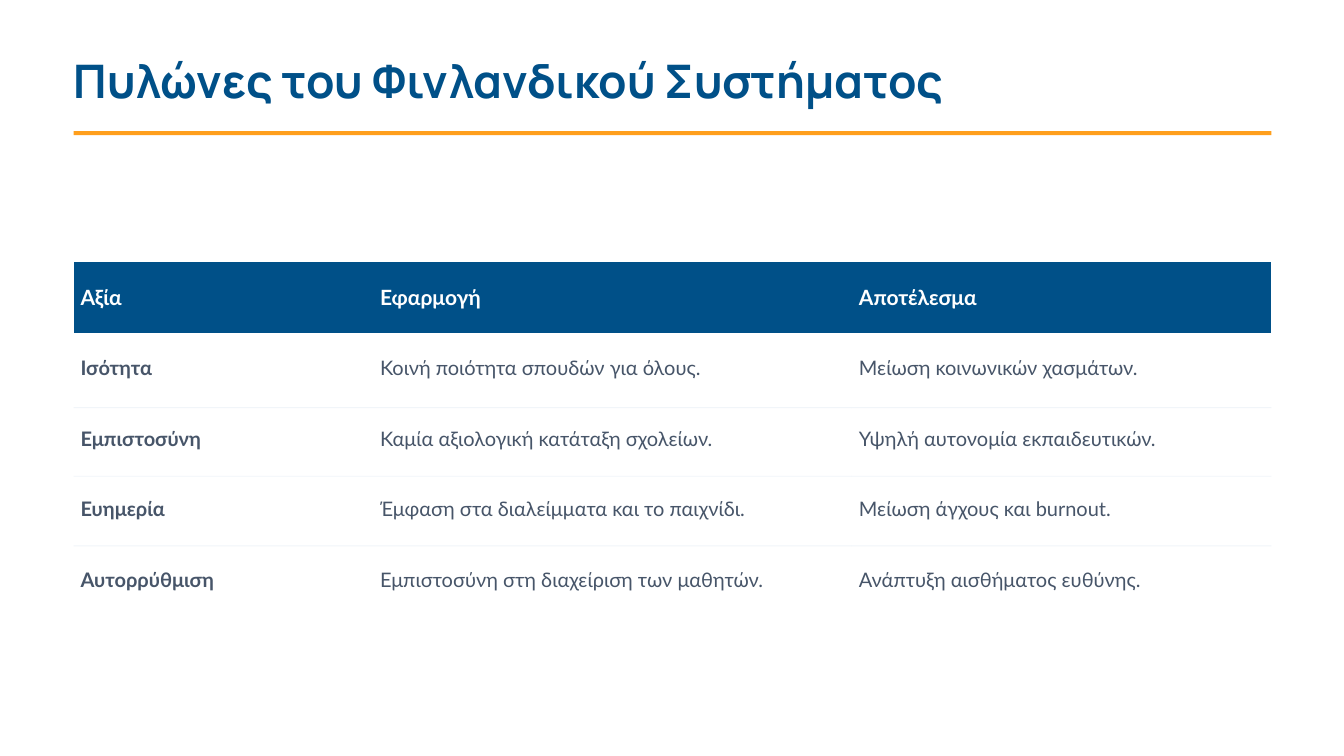
import pptx
import pptx.dml.color
import pptx.enum.shapes
import pptx.enum.text
import pptx.oxml.ns
import pptx.util
from pptx.util import Inches

NAVY, ORANGE, SLATE = "005088", "FF9F1C", "475569"
WHITE, PALE = "FFFFFF", "F1F5F9"
LEFT = 0.73
COLUMN_WIDTHS = (2.97, 4.75, 4.16)
WIDTH = sum(COLUMN_WIDTHS)
ROW_HEIGHT = 0.7
RULE_TOPS = (4.04, 4.72, 5.41)
PLAIN_TABLE_STYLE = "{2D5ABB26-0587-4C30-8999-92F81FD0307C}"

ROWS = (
    ("Αξία", "Εφαρμογή", "Αποτέλεσμα"),
    ("Ισότητα", "Κοινή ποιότητα σπουδών για όλους.", "Μείωση κοινωνικών χασμάτων."),
    ("Εμπιστοσύνη", "Καμία αξιολογική κατάταξη σχολείων.", "Υψηλή αυτονομία εκπαιδευτικών."),
    ("Ευημερία", "Έμφαση στα διαλείμματα και το παιχνίδι.", "Μείωση άγχους και burnout."),
    ("Αυτορρύθμιση", "Εμπιστοσύνη στη διαχείριση των μαθητών.", "Ανάπτυξη αισθήματος ευθύνης."),
)


def set_fill(fill, color):
    fill.solid()
    fill.fore_color.rgb = pptx.dml.color.RGBColor.from_string(color)


def write_text(text_frame, text, font="Lato", size=14.25, color=SLATE, bold=False):
    paragraph = text_frame.paragraphs[0]
    paragraph.alignment = pptx.enum.text.PP_ALIGN.LEFT
    run = paragraph.add_run()
    run.text = text
    run.font.name = font
    run.font.size = pptx.util.Pt(size)
    run.font.bold = bold
    set_fill(run.font.fill, color)


def add_title(slide, text):
    title = slide.shapes.title
    title.left, title.top = Inches(LEFT), Inches(0.52)
    title.width, title.height = Inches(12.47), Inches(0.56)
    frame = title.text_frame
    frame.margin_left = frame.margin_right = frame.margin_top = frame.margin_bottom = 0
    frame.vertical_anchor = pptx.enum.text.MSO_ANCHOR.TOP
    frame.auto_size = pptx.enum.text.MSO_AUTO_SIZE.NONE
    frame.word_wrap = True
    write_text(frame, text, font="Manrope", size=33, color=NAVY, bold=True)


def add_rule(slide, left, top, width, height, color):
    rule = slide.shapes.add_shape(
        pptx.enum.shapes.MSO_SHAPE.RECTANGLE,
        Inches(left), Inches(top), Inches(width), Inches(height))
    rule.shadow.inherit = False
    set_fill(rule.fill, color)
    rule.line.fill.background()


def format_cell(cell, text, is_header, is_first_column):
    cell.margin_left = cell.margin_right = Inches(0.07)
    cell.margin_top = cell.margin_bottom = Inches(0.03)
    cell.vertical_anchor = pptx.enum.text.MSO_ANCHOR.MIDDLE
    set_fill(cell.fill, NAVY if is_header else WHITE)
    write_text(cell.text_frame, text, size=15 if is_header else 14.25,
               color=WHITE if is_header else SLATE,
               bold=is_header or is_first_column)


def add_values_table(slide, top):
    frame = slide.shapes.add_table(
        len(ROWS), len(COLUMN_WIDTHS), Inches(LEFT), Inches(top),
        Inches(WIDTH), Inches(ROW_HEIGHT * len(ROWS)))
    table = frame.table
    table.horz_banding = False
    # A style without borders
    style = table._tbl.tblPr.find(pptx.oxml.ns.qn("a:tableStyleId"))
    style.text = PLAIN_TABLE_STYLE
    for column, width in zip(table.columns, COLUMN_WIDTHS):
        column.width = Inches(width)
    for row_index, texts in enumerate(ROWS):
        table.rows[row_index].height = Inches(ROW_HEIGHT)
        for column_index, text in enumerate(texts):
            format_cell(table.cell(row_index, column_index), text,
                        row_index == 0, column_index == 0)


def add_row_rules(slide):
    for top in RULE_TOPS:
        for index, width in enumerate(COLUMN_WIDTHS):
            left = LEFT + sum(COLUMN_WIDTHS[:index])
            add_rule(slide, left, top, width, 0.01, PALE)


def main():
    presentation = pptx.Presentation()
    presentation.slide_width = Inches(13.33)
    presentation.slide_height = Inches(7.5)
    slide = presentation.slides.add_slide(presentation.slide_layouts[5])
    set_fill(slide.background.fill, WHITE)

    # Table with pale rules between the body rows
    add_values_table(slide, 2.6)
    add_row_rules(slide)

    # Title and its underline
    add_title(slide, "Πυλώνες του Φινλανδικού Συστήματος")
    add_rule(slide, LEFT, 1.3, WIDTH, 0.04, ORANGE)

    presentation.save("out.pptx")


if __name__ == "__main__":
    main()
